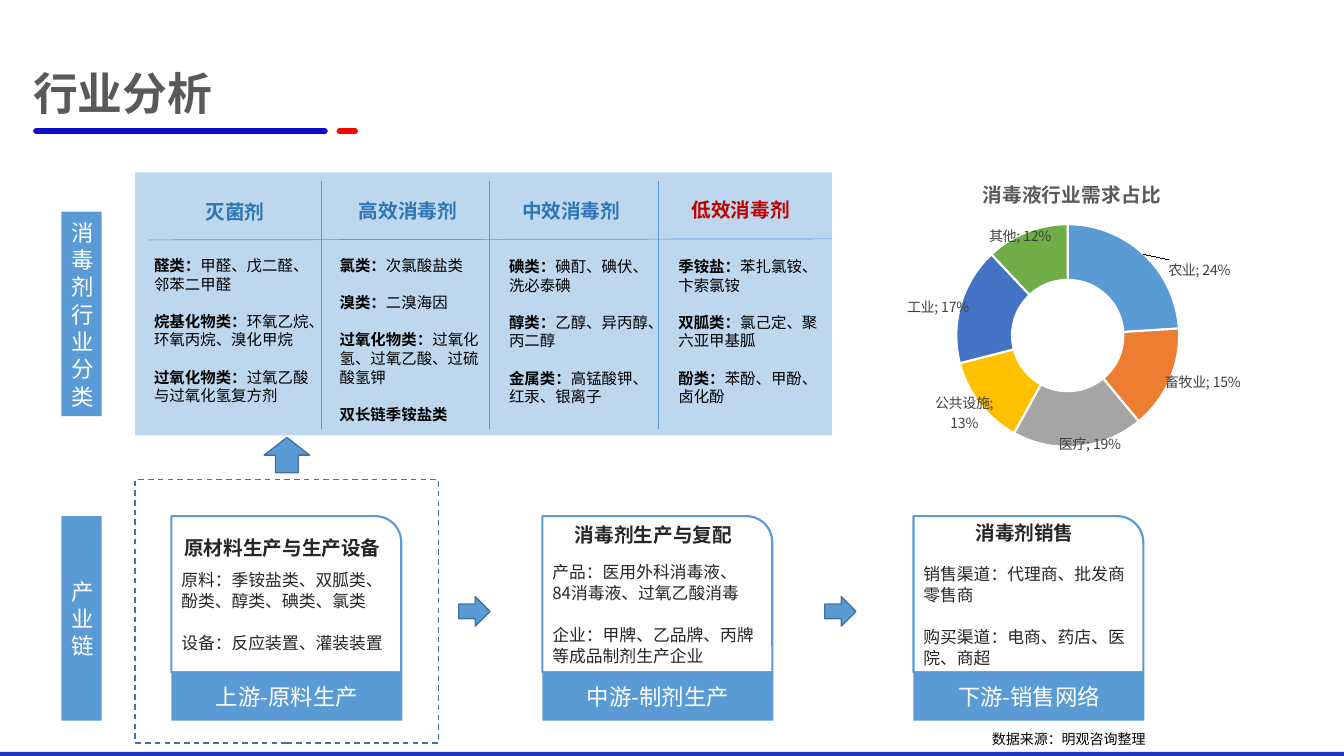
from copy import deepcopy

from lxml.etree import SubElement
from pptx import Presentation
from pptx.chart.data import CategoryChartData
from pptx.dml.color import RGBColor
from pptx.enum.chart import XL_CHART_TYPE as Chart
from pptx.enum.dml import MSO_LINE as Dash
from pptx.enum.shapes import MSO_CONNECTOR as Connector, MSO_SHAPE as Shape
from pptx.enum.text import MSO_ANCHOR as Anchor, PP_ALIGN as Align
from pptx.oxml import parse_xml
from pptx.oxml.ns import nsdecls, qn
from pptx.util import Pt

PX = 9144  # 100 px to the inch
CJK = "Noto Sans CJK SC"
BLUE, EDGE, PALE, HEAD, RED = "5B9BD5", "43739E", "BDD7EE", "2E75B6", "C00000"
LEADING = 1.22

# Content
TITLE = "行业分析"
SOURCE = "数据来源：明观咨询整理"
SIDE_LABELS = [("消毒剂行业分类", 210), ("产业链", 512)]
# heading, colour, heading box (x, y, w), body box (x, y, w, h), entries
CLASSES = [
    ("灭菌剂", HEAD, (194, 193, 84), (143, 249, 174, 158),
     [("醛类：", "甲醛、戊二醛、邻苯二甲醛"),
      ("烷基化物类：", "环氧乙烷、环氧丙烷、溴化甲烷"),
      ("过氧化物类：", "过氧乙酸与过氧化氢复方剂")]),
    ("高效消毒剂", HEAD, (346, 192, 121), (327, 249, 162, 177),
     [("氯类：", "次氯酸盐类"), ("溴类：", "二溴海因"),
      ("过氧化物类：", "过氧化氢、过氧乙酸、过硫酸氢钾"),
      ("双长链季铵盐类", "")]),
    ("中效消毒剂", HEAD, (508, 192, 121), (495, 250, 162, 158),
     [("碘类：", "碘酊、碘伏、洗必泰碘"),
      ("醇类：", "乙醇、异丙醇、丙二醇"),
      ("金属类：", "高锰酸钾、红汞、银离子")]),
    ("低效消毒剂", RED, (676, 191, 121), (663, 250, 162, 158),
     [("季铵盐：", "苯扎氯铵、卞索氯铵"),
      ("双胍类：", "氯己定、聚六亚甲基胍"),
      ("酚类：", "苯酚、甲酚、卤化酚")]),
]
# stage, heading, gap under heading in points, body paragraphs
CHAIN = [
    ("上游-原料生产", "原材料生产与生产设备", 7,
     ["原料：季铵盐类、双胍类、酚类、醇类、碘类、氯类", "设备：反应装置、灌装装置"]),
    ("中游-制剂生产", "消毒剂生产与复配", 10,
     ["产品：医用外科消毒液、84消毒液、过氧乙酸消毒",
      "企业：甲牌、乙品牌、丙牌等成品制剂生产企业"]),
    ("下游-销售网络", "消毒剂销售", 13,
     ["销售渠道：代理商、批发商零售商", "购买渠道：电商、药店、医院、商超"]),
]
CHART_TITLE = "消毒液行业需求占比"
# category, share, colour, label shift in px
DEMAND = [
    ("农业", 0.24, "5B9BD5", (74, -5)), ("畜牧业", 0.15, "ED7D31", (58, 13)),
    ("医疗", 0.19, "A5A5A5", (14, 25)), ("公共设施", 0.13, "FFC000", (-37, 26)),
    ("工业", 0.17, "4472C4", (-49, -5)), ("其他", 0.12, "70AD47", (-17, -22)),
]
CHART_BOX = (838, 153, 442, 313)

deck = Presentation()
deck.slide_width, deck.slide_height = 1333 * PX, 750 * PX
page = deck.slides.add_slide(deck.slide_layouts[6])


def rgb(value):
    return RGBColor.from_string(value)


def emu(*lengths):
    return [length * PX for length in lengths]


def add_shape(kind, box, fill=None, line=None, width=1):
    shape = page.shapes.add_shape(kind, *emu(*box))
    shape.shadow.inherit = False
    if fill:
        shape.fill.solid()
        shape.fill.fore_color.rgb = rgb(fill)
    else:
        shape.fill.background()
    if line:
        shape.line.color.rgb = rgb(line)
        shape.line.width = Pt(width)
    else:
        shape.line.fill.background()
    return shape


def add_line(start, end, color, width):
    line = page.shapes.add_connector(Connector.STRAIGHT, *emu(*start, *end))
    line.line.color.rgb = rgb(color)
    line.line.width = Pt(width)
    SubElement(line.element.spPr, qn("a:effectLst"))
    return line


def set_font(font, size, color, bold=None, name=CJK):
    font.size, font.name, font.bold = Pt(size), name, bold
    font.color.rgb = rgb(color)


def write(box, items, align=Align.LEFT, anchor=Anchor.TOP, wrap=True):
    """Each item: spans of (text, bold), size, colour, space before, leading."""
    frame = box.text_frame
    frame.word_wrap, frame.vertical_anchor = wrap, anchor
    for index, (spans, size, color, before, leading) in enumerate(items):
        para = frame.add_paragraph() if index else frame.paragraphs[0]
        para.alignment = align
        para.line_spacing = Pt(leading or round(size * LEADING, 1))
        if before:
            para.space_before = Pt(before)
        set_font(para.font, size, color)
        for text, bold in spans:
            span = para.add_run()
            span.text, span.font.bold = text, bold
    return frame


def add_text(box, *items, **options):
    return write(page.shapes.add_textbox(*emu(*box)), items, **options)


def add_label(box, text):
    write(add_shape(Shape.RECTANGLE, box, BLUE), [([(text, False)], 16, "FFFFFF", 0, 0)],
          Align.CENTER, Anchor.MIDDLE)


def place(parent, position, x, y, w=None, h=None, inner=False):
    for old in parent.findall(qn("c:layout")):
        parent.remove(old)
    parts = [("layoutTarget", "inner")] if inner else []
    if parent.tag != qn("c:dLbl"):
        parts += [("xMode", "edge"), ("yMode", "edge")]
    parts += [(key, round(value, 3)) for key, value in zip("xywh", (x, y, w, h))
              if value is not None]
    body = "".join(f'<c:{key} val="{value}"/>' for key, value in parts)
    parent.insert(position, parse_xml(
        f'<c:layout {nsdecls("c")}><c:manualLayout>{body}</c:manualLayout></c:layout>'))


def set_east_asian(root):
    for props in root.iter(qn("a:defRPr")):
        if props.find(qn("a:latin")) is not None:
            SubElement(props, qn("a:ea")).set("typeface", CJK)


# Title and rules
add_shape(Shape.RECTANGLE, (-5, 746, 1339, 8), "2235C1")
add_text((23, 57, 200, 64), ([(TITLE, True)], 32, "595959", 0, 41), wrap=False)
for left, right, color in [(36, 322, "0E0ECB"), (337, 352, "FF0000")]:
    rule = add_line((left, 130), (right, 130), color, 4.5)
    rule.line._get_or_add_ln().set("cap", "rnd")

# Supply chain
for index, (stage, heading, gap, bodies) in enumerate(CHAIN):
    left = 170 + 368 * index
    card = add_shape(Shape.ROUND_1_RECTANGLE, (left, 512, 228, 155), None, BLUE, 1.5)
    items = [([(heading, True)], 14, "262626", 0, 0)]
    items += [([(body, False)], 12, "262626", before, 15)
              for body, before in zip(bodies, (gap, 15))]
    frame = write(card, items, anchor=Anchor.MIDDLE)
    frame.paragraphs[0].alignment = Align.CENTER
    add_label((left, 666, 229, 49), stage)
for left in (455, 818):
    add_shape(Shape.RIGHT_ARROW, (left, 592, 31, 29), BLUE, EDGE)
group = add_shape(Shape.RECTANGLE, (134, 476, 301, 261), None, EDGE)
group.line.dash_style = Dash.DASH
add_shape(Shape.DOWN_ARROW, (262, 434, 45, 35), BLUE, EDGE).rotation = 180

# Classification panel
add_shape(Shape.RECTANGLE, (134, 171, 691, 261), PALE)
add_line((147, 238), (825, 237), BLUE, 0.5)
for left in (319, 485, 653):
    add_line((left, 180), (left, 426), BLUE, 0.5)
for heading, color, head_box, body_box, entries in CLASSES:
    add_text((*head_box, 34), ([(heading, True)], 14, color, 0, 0))
    add_text(body_box, *[
        ([(term, True)] + ([(detail, False)] if detail else []),
         11, "000000", 13.3 if index else 0, 13.3)
        for index, (term, detail) in enumerate(entries)])

# Demand doughnut
names, shares, colors, shifts = zip(*DEMAND)
data = CategoryChartData(number_format="0%")
data.categories = names
data.add_series(CHART_TITLE, shares)
chart = page.shapes.add_chart(Chart.DOUGHNUT, *emu(*CHART_BOX), data).chart
chart.has_legend = False
set_font(chart.font, 10, "000000", name="Calibri")
chart.has_title = True
heading = chart.chart_title.text_frame
heading.text = CHART_TITLE
set_font(heading.paragraphs[0].font, 14, "595959", True)
plot = chart.plots[0]
plot.vary_by_categories = True
ring = plot.series[0]
for index, color in enumerate(colors):
    slice_format = ring.points[index].format
    slice_format.fill.solid()
    slice_format.fill.fore_color.rgb = rgb(color)
    slice_format.line.color.rgb = rgb("FFFFFF")
    slice_format.line.width = Pt(1.5)
labels = ring.data_labels
labels.show_value = labels.show_category_name = True
labels.number_format, labels.number_format_is_linked = "0%", False
set_font(labels.font, 10, "404040")
space = chart.element
set_east_asian(space)
place(space.xpath("c:chart/c:title")[0], 1, 0.3, 0.06)
place(space.xpath("c:chart/c:plotArea")[0], 0, 0.25, 0.22, 0.5, 0.71, inner=True)
space.xpath(".//c:holeSize")[0].set("val", "75")
label_list = space.xpath(".//c:ser/c:dLbls")[0]
shared = [part for part in label_list if part.tag != qn("c:showLeaderLines")]
for index, (dx, dy) in enumerate(shifts):
    label = parse_xml(f'<c:dLbl {nsdecls("c")}><c:idx val="{index}"/></c:dLbl>')
    place(label, 1, dx / CHART_BOX[2], dy / CHART_BOX[3])
    label.extend([deepcopy(part) for part in shared])
    label_list.insert(index, label)

# Side labels and source
for text, top in SIDE_LABELS:
    add_label((61, top, 40, 203), text)
footer = add_text((974, 720, 192, 27), ([(SOURCE, False)], 10, "000000", 0, 0))
footer.paragraphs[0].font.name = "Calibri"

set_east_asian(page.shapes.element)
deck.save("out.pptx")
